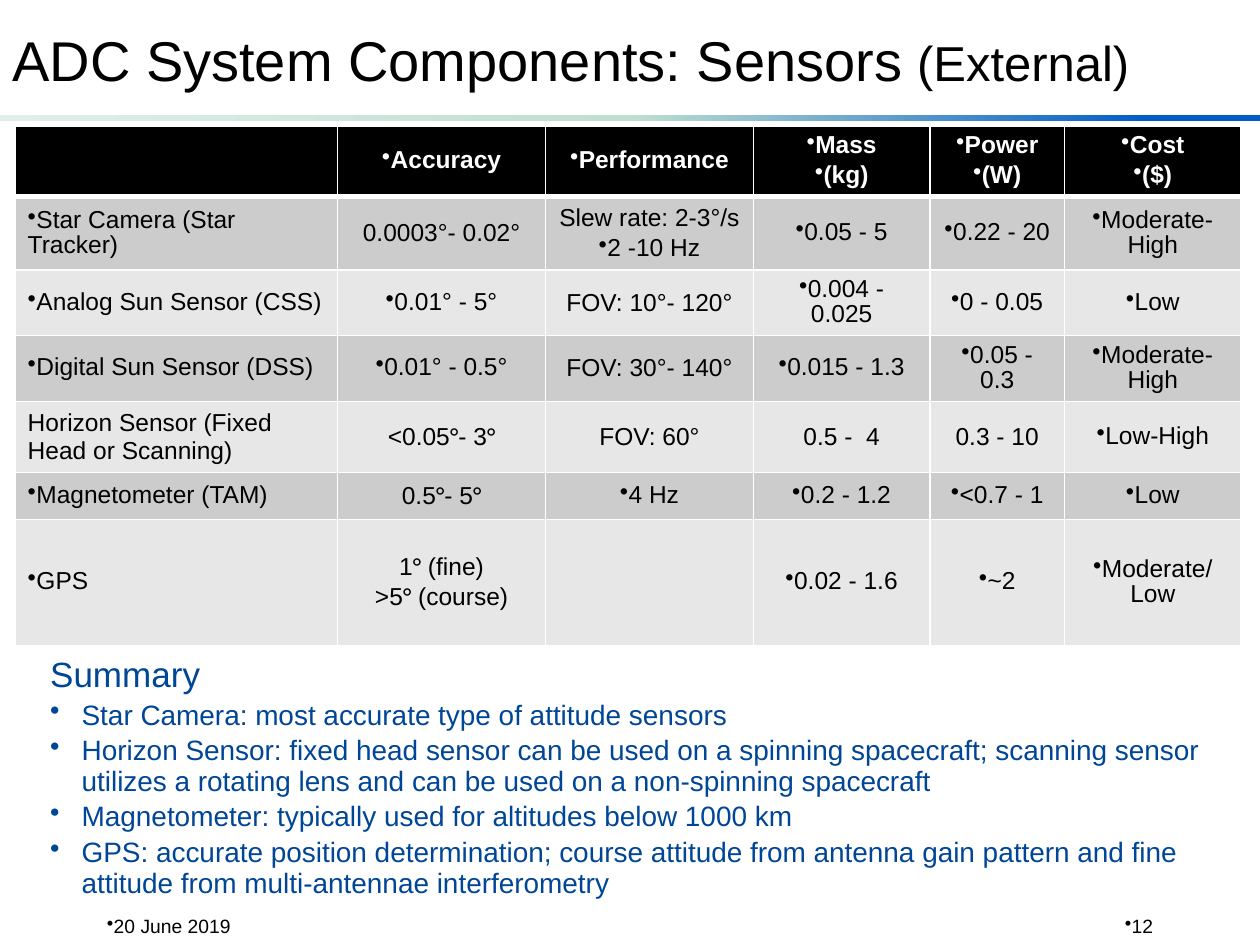
from pptx import Presentation
from pptx.dml.color import RGBColor
from pptx.enum.shapes import MSO_SHAPE
from pptx.enum.text import MSO_ANCHOR, PP_ALIGN
from pptx.oxml.ns import qn
from pptx.util import Inches, Pt
from lxml import etree

LEFT, CENTER, RIGHT = PP_ALIGN.LEFT, PP_ALIGN.CENTER, PP_ALIGN.RIGHT
TOP, MIDDLE = MSO_ANCHOR.TOP, MSO_ANCHOR.MIDDLE
RECTANGLE = MSO_SHAPE.RECTANGLE

BLACK = RGBColor(0x00, 0x00, 0x00)
WHITE = RGBColor(0xFF, 0xFF, 0xFF)
NAVY = RGBColor(0x00, 0x46, 0x96)
BANDS = RGBColor(0xCC, 0xCC, 0xCC), RGBColor(0xE7, 0xE7, 0xE7)
RULE_STOPS = (
    (9, RGBColor(0x00, 0x5D, 0xC8)),
    (50, RGBColor(0xBF, 0xDF, 0xD0)),
    (100, RGBColor(0xE0, 0xEF, 0xE8)),
)

COLUMN_WIDTHS = 2.56, 1.65, 1.65, 1.4, 1.07, 1.4
ROW_HEIGHTS = 0.53, 0.53, 0.38, 0.45, 0.53, 0.37, 1
BULLET = "•"
# A leading bullet marks a list item; text between bars is set in Calibri.
SENSORS = (
    ("", "•Accuracy", "•Performance", "•Mass\n•(kg)", "•Power\n•(W)", "•Cost\n•($)"),
    ("•Star Camera (Star Tracker)", "0.0003°- 0.02°", "Slew rate: 2-3°/s\n•2 -10 Hz",
     "•0.05 - 5", "•0.22 - 20", "•Moderate-High"),
    ("•Analog Sun Sensor (CSS)", "•0.01° - 5°", "FOV: 10°- 120°",
     "•0.004 - 0.025", "•0 - 0.05", "•Low"),
    ("•Digital Sun Sensor (DSS)", "•0.01° - 0.5°", "FOV: 30°- 140°",
     "•0.015 - 1.3", "•0.05 - 0.3", "•Moderate-High"),
    ("Horizon Sensor (Fixed Head or Scanning)", "<0.05|°|- 3|°", "FOV: 60°",
     "0.5 -  4", "0.3 - 10", "•Low-High"),
    ("•Magnetometer (TAM)", "0.5|°|- 5|°", "•4 Hz", "•0.2 - 1.2", "•<0.7 - 1", "•Low"),
    ("•GPS", "1|°| (fine)\n>5|°| (course)", "", "•0.02 - 1.6", "•~2", "•Moderate/\vLow"),
)
SUMMARY = (
    "Star Camera: most accurate type of attitude sensors",
    "Horizon Sensor: fixed head sensor can be used on a spinning spacecraft; "
    "scanning sensor utilizes a rotating lens and can be used on a non-spinning spacecraft",
    "Magnetometer: typically used for altitudes below 1000 km",
    "GPS: accurate position determination; course attitude from antenna gain pattern "
    "and fine attitude from multi-antennae interferometry",
)


def inches(box):
    return [Inches(length) for length in box]


def format_span(span, size, color, bold=False, font="Arial"):
    span.font.name = font
    span.font.size = Pt(size)
    span.font.color.rgb = color
    span.font.bold = bold


def set_list_item(para, size, indent=0):
    para.line_spacing = 0.9
    para.space_before = Pt(size * 0.2)
    add_bullet(para, indent)


def add_bullet(para, indent=0):
    properties = para._p.get_or_add_pPr()
    properties.set("marL", str(Inches(indent)))
    properties.set("indent", str(-Inches(indent)))
    etree.SubElement(properties, qn("a:buChar")).set("char", BULLET)


def add_text(page, box, text, size, color, align=LEFT, anchor=MIDDLE):
    frame = page.shapes.add_textbox(*inches(box)).text_frame
    frame.word_wrap = True
    frame.vertical_anchor = anchor
    frame.text = text
    for para in frame.paragraphs:
        para.alignment = align
        for span in para.runs:
            format_span(span, size, color)
    return frame


def add_title(page, box):
    frame = add_text(page, box, "ADC System Components: Sensors", 32, BLACK)
    span = frame.paragraphs[0].add_run()
    span.text = " (External)"
    format_span(span, 28, BLACK)


def add_rule(page, box):
    rule = page.shapes.add_shape(RECTANGLE, *inches(box))
    rule.shadow.inherit = False
    rule.line.fill.background()
    rule.fill.gradient()
    rule.fill.gradient_angle = 180
    stops = rule._element.spPr.find(qn("a:gradFill")).find(qn("a:gsLst"))
    for stop in list(stops):
        stops.remove(stop)
    for position, color in RULE_STOPS:
        stop = etree.SubElement(stops, qn("a:gs"), pos=str(position * 1000))
        etree.SubElement(stop, qn("a:srgbClr"), val=str(color))


def set_borders(cell, bottom_width):
    properties = cell._tc.get_or_add_tcPr()
    widths = {"a:lnL": 1, "a:lnR": 1, "a:lnT": 1, "a:lnB": bottom_width}
    for position, (side, width) in enumerate(widths.items()):
        line = etree.Element(qn(side), w=str(Pt(width)))
        fill = etree.SubElement(line, qn("a:solidFill"))
        etree.SubElement(fill, qn("a:srgbClr"), val=str(WHITE))
        properties.insert(position, line)


def fill_cell(cell, text, align, color, bold):
    cell.vertical_anchor = MIDDLE
    lines = text.split("\n")
    cell.text_frame.text = "\n".join(line.lstrip(BULLET).split("|")[0] for line in lines)
    for line, para in zip(lines, cell.text_frame.paragraphs):
        para.alignment = align
        if line.startswith(BULLET):
            set_list_item(para, 14)
        for span in para.runs:
            format_span(span, 14, color, bold)
        for number, part in enumerate(line.split("|")[1:]):
            if part:
                span = para.add_run()
                span.text = part
                format_span(span, 14, color, bold, "Arial" if number % 2 else "Calibri")


def add_sensor_table(page, box):
    table = page.shapes.add_table(len(SENSORS), len(COLUMN_WIDTHS), *inches(box)).table
    for column, width in zip(table.columns, COLUMN_WIDTHS):
        column.width = Inches(width)
    for row, height in zip(table.rows, ROW_HEIGHTS):
        row.height = Inches(height)
    for row, texts in enumerate(SENSORS):
        header = row == 0
        for column, text in enumerate(texts):
            cell = table.cell(row, column)
            cell.fill.solid()
            cell.fill.fore_color.rgb = BLACK if header else BANDS[(row - 1) % 2]
            set_borders(cell, 3 if header else 1)
            fill_cell(cell, text, CENTER if column else LEFT,
                      WHITE if header else BLACK, header)


def add_summary(page, box):
    frame = add_text(page, box, "\n".join(("Summary",) + SUMMARY), 16, NAVY, anchor=TOP)
    heading, *items = frame.paragraphs
    heading.line_spacing = 0.9
    heading.space_before = Pt(4)
    format_span(heading.runs[0], 20, NAVY)
    for para in items:
        set_list_item(para, 16, 0.25)


def add_footer(page, box):
    left, top, width, height = box
    field_width = 2.08
    fields = (left, "20 June 2019", LEFT), (left + width - field_width, "12", RIGHT)
    for field_left, text, align in fields:
        frame = add_text(page, (field_left, top, field_width, height), text, 11, BLACK, align)
        add_bullet(frame.paragraphs[0])


def main():
    deck = Presentation()
    deck.slide_width, deck.slide_height = Inches(10), Inches(7.5)
    page = deck.slides.add_slide(deck.slide_layouts[6])
    add_rule(page, (0, 0.91, 10, 0.05))
    add_title(page, (0, 0, 9.2, 0.94))
    add_sensor_table(page, (0.12, 1, sum(COLUMN_WIDTHS), sum(ROW_HEIGHTS)))
    add_footer(page, (0.75, 7.25, 8.5, 0.2))
    add_summary(page, (0.3, 5.17, 9.4, 2.07))
    deck.save("out.pptx")


if __name__ == "__main__":
    main()
